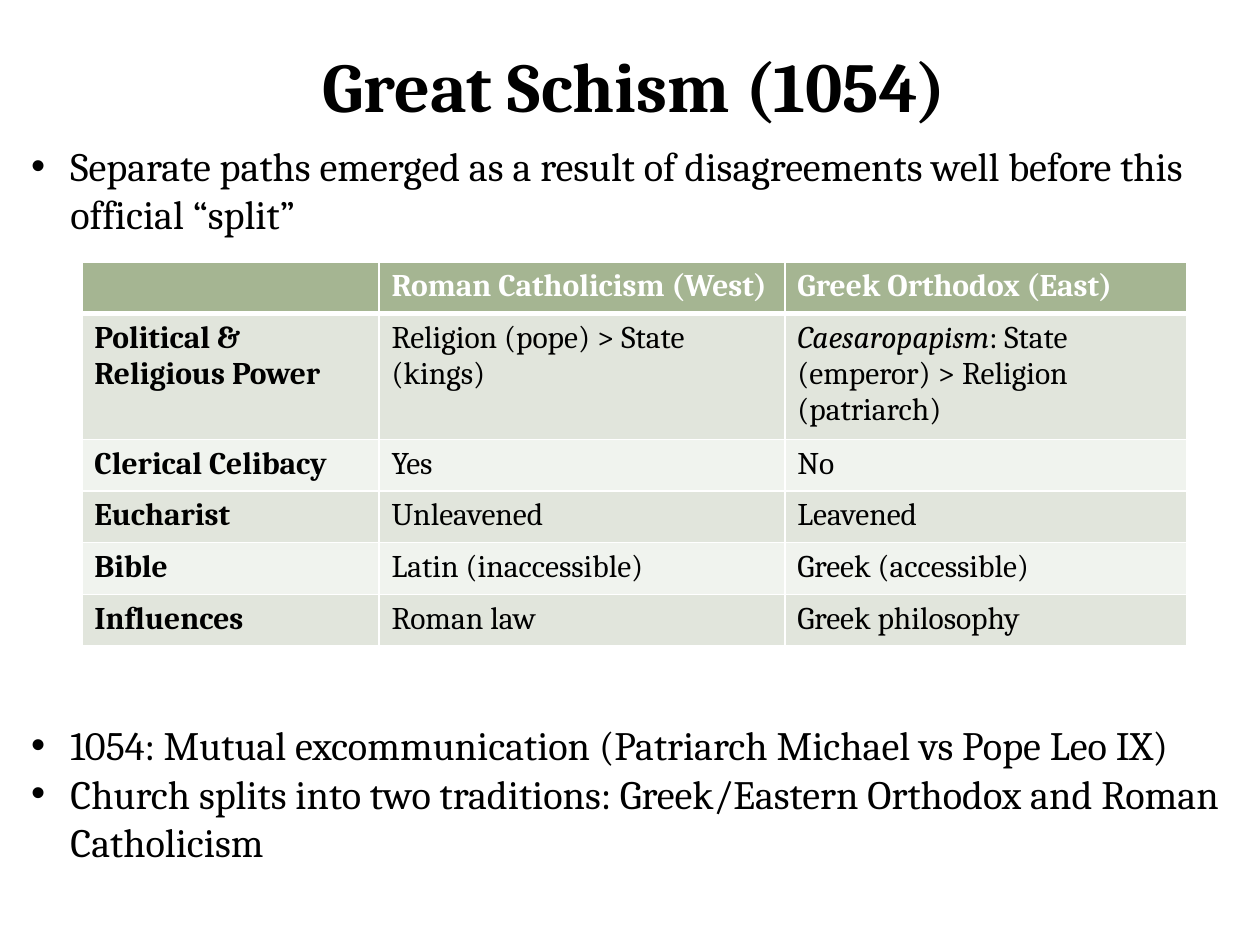
import pptx
import pptx.util
import pptx.dml.color
import pptx.enum.text
import pptx.oxml
import pptx.oxml.ns

Cm, Pt = pptx.util.Cm, pptx.util.Pt
RGB = pptx.dml.color.RGBColor
ALIGN = pptx.enum.text.PP_ALIGN
BLACK = RGB(0x00, 0x00, 0x00)
WHITE = RGB(0xFF, 0xFF, 0xFF)
GREEN = RGB(0xA5, 0xB5, 0x92)
BANDS = [RGB(0xF0, 0xF3, 0xEE), RGB(0xE1, 0xE5, 0xDC)]
NS = pptx.oxml.ns.nsdecls("a")

# Paragraphs with the space above each, in points
POINTS = [
    ("Separate paths emerged as a result of disagreements well before "
     "this official “split”", 0),
    ("1054: Mutual excommunication (Patriarch Michael vs Pope Leo IX)", 276),
    ("Church splits into two traditions: Greek/Eastern Orthodox and "
     "Roman Catholicism", 0),
]
TERM = "Caesaropapism"
ROWS = [
    ("", "Roman Catholicism (West)", "Greek Orthodox (East)"),
    ("Political & Religious Power", "Religion (pope) > State (kings)",
     TERM + ": State (emperor) > Religion (patriarch)"),
    ("Clerical Celibacy", "Yes", "No"),
    ("Eucharist", "Unleavened", "Leavened"),
    ("Bible", "Latin (inaccessible)", "Greek (accessible)"),
    ("Influences", "Roman law", "Greek philosophy"),
]
COLS = [5.99, 8.18, 8.1]
ROW_H = 1.04


def add_run(para, text, size, color=BLACK, **extra):
    run = para.add_run()
    run.text = text
    form = {"name": "Cambria", "size": Pt(size), **extra}
    for key, value in form.items():
        setattr(run.font, key, value)
    run.font.color.rgb = color


def add_box(slide, box):
    frame = slide.shapes.add_textbox(*map(Cm, box)).text_frame
    frame.word_wrap = True
    return frame


def add_title(slide, box):
    para = add_box(slide, box).paragraphs[0]
    para.alignment = ALIGN.CENTER
    add_run(para, "Great Schism (1054)", 40, bold=True)


def add_list(slide, box):
    frame = add_box(slide, box)
    for i, (text, gap) in enumerate(POINTS):
        para = frame.add_paragraph() if i else frame.paragraphs[0]
        para.space_before = Pt(gap)
        # Bullet with a hanging indent
        props = para._p.get_or_add_pPr()
        props.set("marL", str(Cm(0.79)))
        props.set("indent", str(-Cm(0.79)))
        for tag in ('buFont {} typeface="Arial"', 'buChar {} char="•"'):
            props.append(pptx.oxml.parse_xml(f"<a:{tag.format(NS)}/>"))
        add_run(para, text, 23)


def add_edges(cell, widths):
    props = cell._tc.get_or_add_tcPr()
    for side, width in widths.items():
        props.append(pptx.oxml.parse_xml(
            f'<a:ln{side} {NS} w="{Pt(width)}"><a:solidFill>'
            f'<a:srgbClr val="{WHITE}"/></a:solidFill></a:ln{side}>'))


def add_grid(slide, box):
    left, top, width = box
    table = slide.shapes.add_table(
        len(ROWS), len(COLS), Cm(left), Cm(top), Cm(width),
        Cm(ROW_H * len(ROWS))).table
    for col, size in zip(table.columns, COLS):
        col.width = Cm(size)
    for r, row in enumerate(ROWS):
        table.rows[r].height = Cm(ROW_H)
        for c, text in enumerate(row):
            cell = table.cell(r, c)
            # The rule under the header is thicker
            add_edges(cell, {"L": 1, "R": 1, "T": 3 if r == 1 else 1,
                             "B": 3 if r == 0 else 1})
            cell.fill.solid()
            cell.fill.fore_color.rgb = BANDS[r % 2] if r else GREEN
            para = cell.text_frame.paragraphs[0]
            if text.startswith(TERM):
                add_run(para, TERM, 18, bold=False, italic=True)
                text = text[len(TERM):]
            if text:
                add_run(para, text, 18, BLACK if r else WHITE,
                        bold=r == 0 or c == 0, italic=False)


def main():
    deck = pptx.Presentation()
    deck.slide_width, deck.slide_height = Cm(25.4), Cm(19.05)
    slide = deck.slides.add_slide(deck.slide_layouts[6])
    add_title(slide, (0.64, 0.74, 24.31, 1.96))
    add_list(slide, (0.38, 2.72, 24.69, 15.01))
    add_grid(slide, (1.65, 5.28, sum(COLS)))
    deck.save("out.pptx")


if __name__ == "__main__":
    main()
